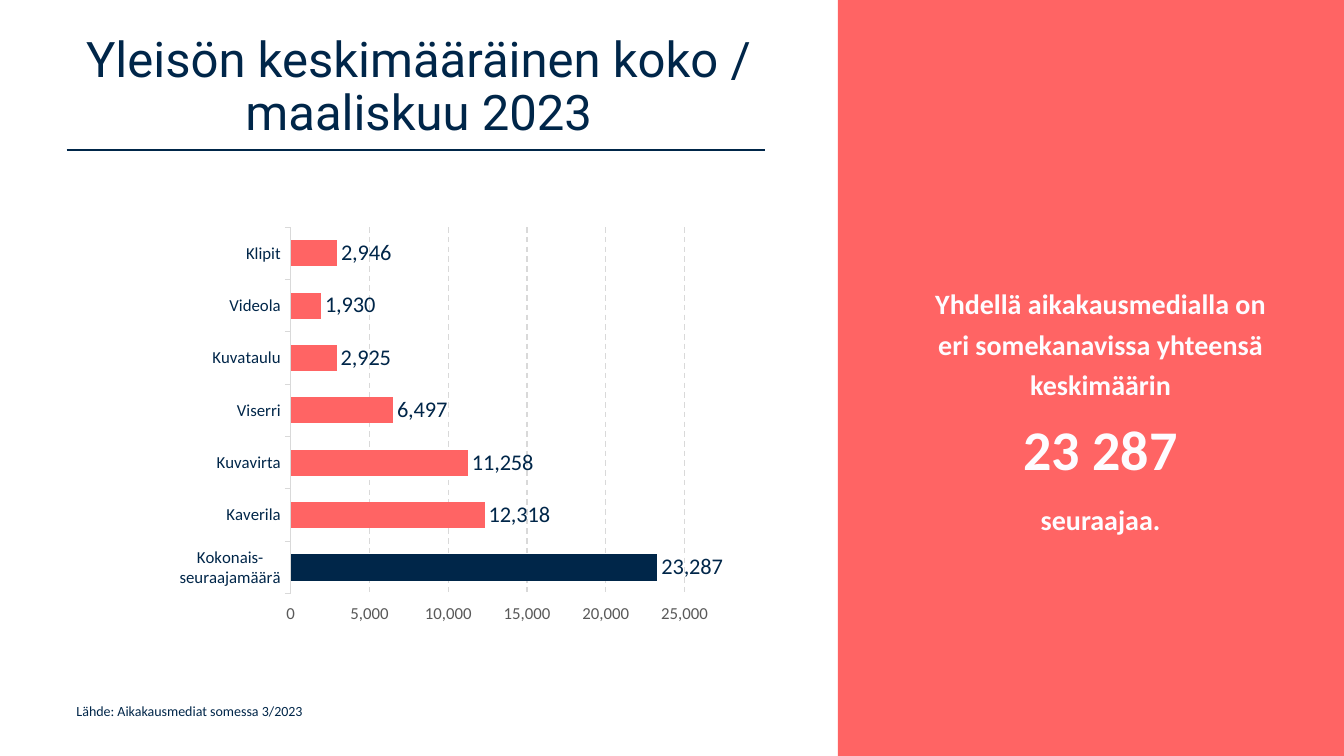
import pptx
import pptx.chart.data
import pptx.dml.color
import pptx.enum.chart
import pptx.enum.dml
import pptx.enum.shapes
import pptx.enum.text
import pptx.oxml
import pptx.oxml.ns
import pptx.util
from dataclasses import dataclass

Inches = pptx.util.Inches

# Content
TITLE = "Yleisön keskimääräinen koko /\vmaaliskuu 2023"
SOURCE = "Lähde: Aikakausmediat somessa 3/2023"
MESSAGE = [
    [("Yhdellä aikakausmedialla on eri somekanavissa yhteensä keskimäärin", "message"),
     ("23 287", "key_figure")],
    [("seuraajaa.", "message")],
]
AUDIENCE = [  # bottom bar first
    ("Kokonais-\nseuraajamäärä", 23287),
    ("Kaverila", 12318),
    ("Kuvavirta", 11258),
    ("Viserri", 6497),
    ("Kuvataulu", 2925),
    ("Videola", 1930),
    ("Klipit", 2946),
]
PLOT_AREA = {"x": 0.347, "y": 0.086, "w": 0.47, "h": 0.838}


@dataclass(frozen=True)
class Theme:
    navy: str = "002649"
    coral: str = "FF6464"
    light: str = "FEFCFF"
    grid: str = "D9D9D9"
    grey: str = "595959"
    heading_font: str = "Roboto"
    body_font: str = "Calibri"
    title: int = 35
    message: int = 20
    key_figure: int = 40
    data_label: int = 16
    axis: int = 12
    source: int = 10


THEME = Theme()


def rgb(value):
    return pptx.dml.color.RGBColor.from_string(value)


def style(font, size, color, name=THEME.body_font, bold=False):
    font.size = pptx.util.Pt(size)
    font.color.rgb = rgb(color)
    font.name = name
    font.bold = bold


def style_line(line, color, width):
    line.color.rgb = rgb(color)
    line.width = pptx.util.Pt(width)


def set_plot_area(chart):
    """Fix the inner plot area as fractions of the chart frame."""
    plot_area = chart._chartSpace.chart.plotArea
    for layout in plot_area.findall(pptx.oxml.ns.qn("c:layout")):
        plot_area.remove(layout)
    parts = '<c:layoutTarget val="inner"/><c:xMode val="edge"/><c:yMode val="edge"/>'
    parts += "".join(f'<c:{key} val="{value}"/>' for key, value in PLOT_AREA.items())
    plot_area.insert(0, pptx.oxml.parse_xml(
        f'<c:layout {pptx.oxml.ns.nsdecls("c")}><c:manualLayout>{parts}'
        '</c:manualLayout></c:layout>'))


def add_audience_chart(slide, left, top, width, height):
    data = pptx.chart.data.CategoryChartData(number_format="#,##0")
    data.categories = [name for name, _ in AUDIENCE]
    data.add_series("Series 1", [value for _, value in AUDIENCE])
    chart = slide.shapes.add_chart(
        pptx.enum.chart.XL_CHART_TYPE.BAR_CLUSTERED, left, top, width, height, data).chart
    chart.has_legend = False
    chart.has_title = False
    style(chart.font, THEME.source, THEME.navy)
    set_plot_area(chart)

    # Bars, with the total in navy
    plot = chart.plots[0]
    plot.gap_width = 100
    plot.vary_by_categories = False
    series = plot.series[0]
    for bar, color in ((series, THEME.coral), (series.points[0], THEME.navy)):
        bar.format.fill.solid()
        bar.format.fill.fore_color.rgb = rgb(color)

    # Value labels
    plot.has_data_labels = True
    labels = plot.data_labels
    labels.show_value = True
    labels.position = pptx.enum.chart.XL_LABEL_POSITION.OUTSIDE_END
    labels.number_format = "#,##0"
    labels.number_format_is_linked = False
    style(labels.font, THEME.data_label, THEME.navy)

    # Axes
    category_axis, value_axis = chart.category_axis, chart.value_axis
    for axis, color in ((category_axis, THEME.navy), (value_axis, THEME.grey)):
        axis.major_tick_mark = pptx.enum.chart.XL_TICK_MARK.OUTSIDE
        axis.minor_tick_mark = pptx.enum.chart.XL_TICK_MARK.NONE
        style(axis.tick_labels.font, THEME.axis, color)
    category_axis.has_major_gridlines = False
    style_line(category_axis.format.line, THEME.grid, 0.75)
    value_axis.minimum_scale = 0
    value_axis.maximum_scale = 25000
    value_axis.major_unit = 5000
    value_axis.tick_labels.number_format = "#,##0"
    value_axis.tick_labels.number_format_is_linked = False
    value_axis.format.line.fill.background()
    value_axis.has_major_gridlines = True
    gridline = value_axis.major_gridlines.format.line
    style_line(gridline, THEME.grid, 1)
    gridline.dash_style = pptx.enum.dml.MSO_LINE.DASH


def main():
    presentation = pptx.Presentation()
    presentation.slide_width = Inches(13.33)
    presentation.slide_height = Inches(7.5)
    slide = presentation.slides.add_slide(presentation.slide_layouts[5])
    panel_left = Inches(8.31)
    middle = pptx.enum.text.MSO_ANCHOR.MIDDLE
    center = pptx.enum.text.PP_ALIGN.CENTER

    # Coral panel
    panel = slide.shapes.add_shape(
        pptx.enum.shapes.MSO_SHAPE.RECTANGLE, panel_left, 0,
        presentation.slide_width - panel_left, presentation.slide_height)
    panel.shadow.inherit = False
    panel.fill.solid()
    panel.fill.fore_color.rgb = rgb(THEME.coral)
    panel.line.fill.background()

    # Title and its rule
    title = slide.shapes.title
    title.left, title.top = 0, Inches(0.25)
    title.width, title.height = panel_left, Inches(1.25)
    title.text_frame.text = TITLE
    title.text_frame.word_wrap = True
    title.text_frame.auto_size = pptx.enum.text.MSO_AUTO_SIZE.NONE
    title.text_frame.vertical_anchor = middle
    paragraph = title.text_frame.paragraphs[0]
    paragraph.alignment = center
    paragraph.line_spacing = 0.9
    for run in paragraph.runs:
        style(run.font, THEME.title, THEME.navy, THEME.heading_font)
    rule = slide.shapes.add_connector(
        pptx.enum.shapes.MSO_CONNECTOR.STRAIGHT,
        Inches(0.66), Inches(1.49), Inches(7.59), Inches(1.49))
    style_line(rule.line, THEME.navy, 1)
    rule._element.spPr.append(
        pptx.oxml.parse_xml(f'<a:effectLst {pptx.oxml.ns.nsdecls("a")}/>'))

    # Audience chart
    add_audience_chart(slide, 0, Inches(1.88), panel_left, Inches(4.34))

    # Message on the panel
    message = slide.shapes.add_textbox(
        Inches(9.04), Inches(1.5), Inches(3.75), Inches(5.1)).text_frame
    message.word_wrap = True
    message.vertical_anchor = middle
    for index, parts in enumerate(MESSAGE):
        paragraph = message.add_paragraph() if index else message.paragraphs[0]
        paragraph.text = "\v".join(text for text, _ in parts)
        paragraph.alignment = center
        paragraph.line_spacing = 1.2
        paragraph.space_before = pptx.util.Pt(10 if index else 0)
        for run, (_, role) in zip(paragraph.runs, parts):
            style(run.font, getattr(THEME, role), THEME.light, bold=True)

    # Source
    source = slide.shapes.add_textbox(
        Inches(0.66), Inches(6.92), Inches(6.58), Inches(0.44)).text_frame
    source.word_wrap = True
    source.text = SOURCE
    style(source.paragraphs[0].runs[0].font, THEME.source, THEME.navy)

    presentation.save("out.pptx")


if __name__ == "__main__":
    main()
